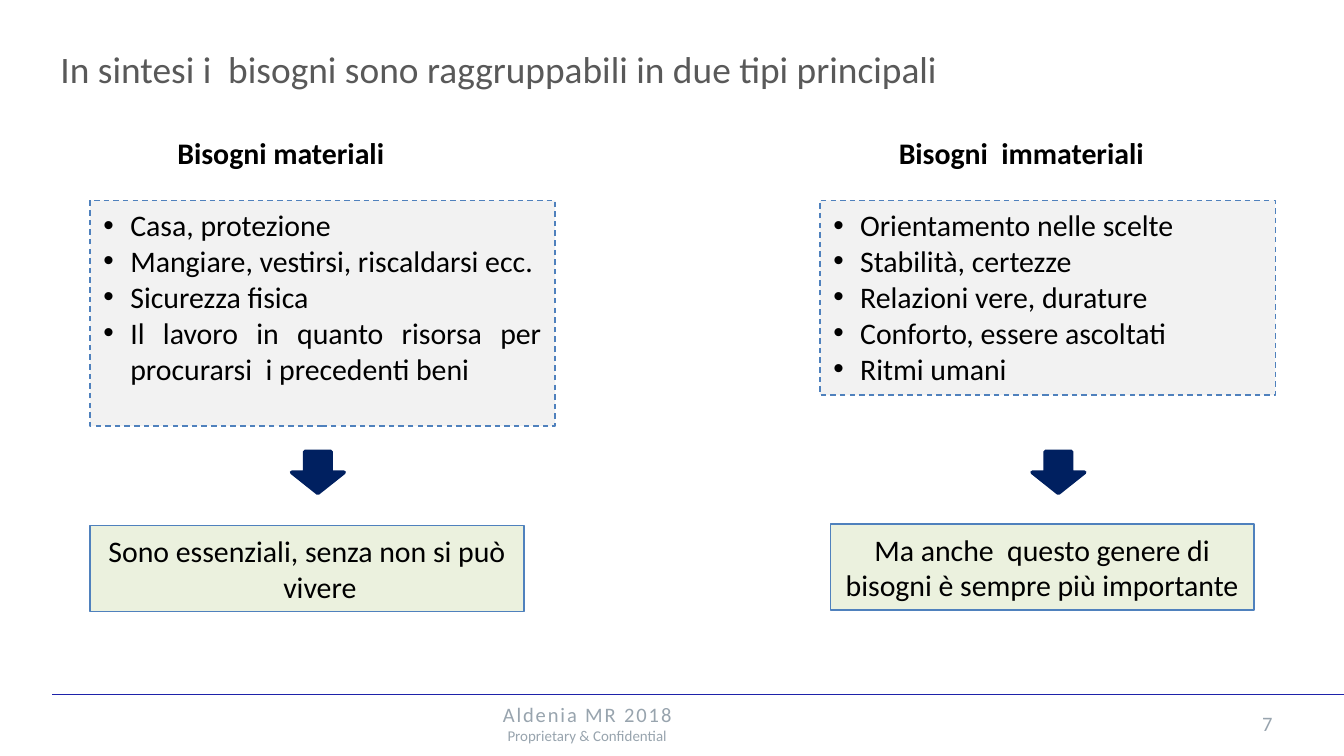
import pptx
import pptx.util
import pptx.dml.color
import pptx.enum.dml
import pptx.enum.shapes
import pptx.enum.text
import lxml.etree

Inches = pptx.util.Inches
Pt = pptx.util.Pt
ALIGN = pptx.enum.text.PP_ALIGN
ANCHOR = pptx.enum.text.MSO_ANCHOR
SHAPE = pptx.enum.shapes.MSO_SHAPE
DRAWING = "{http://schemas.openxmlformats.org/drawingml/2006/main}"


def color(value):
    return pptx.dml.color.RGBColor.from_string(value)


def place(shape, box):
    shape.left, shape.top, shape.width, shape.height = map(Inches, box)


def paint(shape, fill, line, width=0.75):
    shape.fill.solid()
    shape.fill.fore_color.rgb = color(fill)
    shape.line.color.rgb = color(line)
    shape.line.width = Pt(width)


def set_indent(para, indent, bullet=None):
    properties = para._p.get_or_add_pPr()
    properties.set("marL", str(Inches(indent)))
    properties.set("indent", str(-Inches(indent)))
    if bullet:
        font = lxml.etree.SubElement(properties, DRAWING + "buFont")
        font.set("typeface", "Arial")
        mark = lxml.etree.SubElement(properties, DRAWING + "buChar")
        mark.set("char", bullet)


def write(shape, lines, size, ink, align, anchor=ANCHOR.TOP, bold=False,
          indent=0, bullet=None):
    frame = shape.text_frame
    frame.word_wrap = True
    frame.auto_size = pptx.enum.text.MSO_AUTO_SIZE.NONE
    frame.vertical_anchor = anchor
    for index, line in enumerate(lines):
        para = frame.paragraphs[0] if index == 0 else frame.add_paragraph()
        para.alignment = align
        para.space_before = Pt(0)
        if indent:
            set_indent(para, indent, bullet)
        span = para.add_run()
        span.text = line
        span.font.name = "Calibri"
        span.font.size = Pt(size)
        span.font.bold = bold
        span.font.color.rgb = color(ink)


def add_plain_shape(page, kind, box):
    shape = page.shapes.add_shape(kind, *map(Inches, box))
    shape.shadow.inherit = False
    return shape


def add_title(page, box, text):
    title = page.shapes.title
    place(title, box)
    write(title, [text], 20, "595959", ALIGN.LEFT)


def add_needs_column(page, box, body, heading, needs, list_box, summary,
                     summary_box, summary_indent=0):
    left, top, width, height = box

    label = add_plain_shape(page, SHAPE.ROUNDED_RECTANGLE, (left, top, width, 0.39))
    label.fill.background()
    label.line.fill.background()
    write(label, [heading], 16, "000000", ALIGN.CENTER, ANCHOR.MIDDLE, bold=True)

    def inside(part):
        return left + part[0], top + part[1], part[2], part[3]

    place(body, inside(list_box))
    paint(body, "F2F2F2", "4F81BD")
    body.line.dash_style = pptx.enum.dml.MSO_LINE.DASH
    write(body, needs, 16, "000000", ALIGN.JUSTIFY, indent=0.2, bullet="•")

    arrow = add_plain_shape(page, SHAPE.DOWN_ARROW, (left + 1.42, top + 2.42, 0.39, 0.31))
    paint(arrow, "002060", "002060", 2)

    panel = add_plain_shape(page, SHAPE.RECTANGLE, inside(summary_box))
    paint(panel, "EBF1DE", "4F81BD")
    write(panel, [summary], 16, "000000", ALIGN.CENTER, ANCHOR.MIDDLE,
          indent=summary_indent)


def add_footer(page, box):
    left, top, width, height = box
    rule = page.shapes.add_connector(
        pptx.enum.shapes.MSO_CONNECTOR.STRAIGHT,
        Inches(left), Inches(top), Inches(left + width), Inches(top))
    rule.line.color.rgb = color("1E22AA")
    rule.line.width = Pt(0.75)
    lxml.etree.SubElement(rule._element.spPr, DRAWING + "effectLst")

    owner = page.shapes.add_textbox(
        Inches(left + 1.46), Inches(top + 0.08), Inches(5.04), Inches(0.26))
    write(owner, ["Aldenia MR 2018", "Proprietary & Confidential"], 11, "98A4AE",
          ALIGN.CENTER, ANCHOR.MIDDLE)
    name, notice = owner.text_frame.paragraphs
    name.runs[0].font._element.set("spc", "100")
    notice.runs[0].font.size = Pt(8)

    number = page.shapes.add_textbox(
        Inches(left + 8.55), Inches(top + 0.07), Inches(0.98), Inches(0.22))
    write(number, ["7"], 11, "98A4AE", ALIGN.CENTER)


def main():
    deck = pptx.Presentation()
    deck.slide_width = Inches(10)
    deck.slide_height = deck.slide_width * 9 // 16
    page = deck.slides.add_slide(deck.slide_layouts[3])
    add_title(page, (0.35, 0.29, 9.06, 0.44),
              "In sintesi i  bisogni sono raggruppabili in due tipi principali")
    add_needs_column(
        page, (0.75, 0.94, 2.68, 3.61), page.placeholders[1],
        "Bisogni materiali",
        ["Casa, protezione", "Mangiare, vestirsi, riscaldarsi ecc.",
         "Sicurezza fisica",
         "Il lavoro in quanto risorsa per procurarsi  i precedenti beni"],
        (-0.08, 0.55, 3.46, 1.68),
        "Sono essenziali, senza non si può vivere",
        (-0.08, 2.97, 3.23, 0.64), 0.19)
    add_needs_column(
        page, (6.26, 0.94, 2.68, 3.61), page.placeholders[2],
        "Bisogni  immateriali",
        ["Orientamento nelle scelte", "Stabilità, certezze",
         "Relazioni vere, durature", "Conforto, essere ascoltati",
         "Ritmi umani"],
        (-0.16, 0.55, 3.39, 1.45),
        "Ma anche  questo genere di bisogni è sempre più importante",
        (-0.08, 2.96, 3.15, 0.64))
    add_footer(page, (0.39, 5.17, 9.61, 0.45))
    deck.save("out.pptx")


if __name__ == "__main__":
    main()
